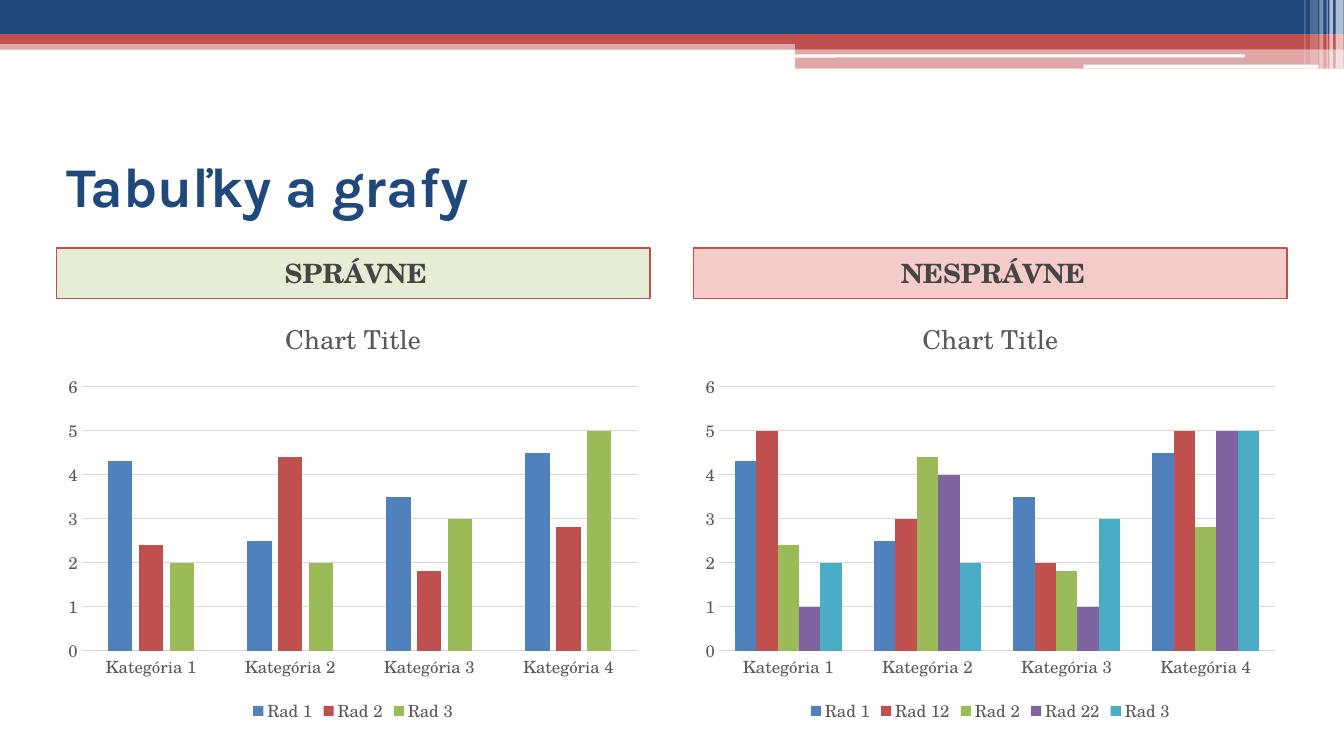
from lxml import etree
from pptx import Presentation
from pptx.chart.data import CategoryChartData
from pptx.dml.color import RGBColor
from pptx.enum.chart import XL_CHART_TYPE, XL_LEGEND_POSITION, XL_TICK_MARK
from pptx.enum.shapes import MSO_SHAPE
from pptx.enum.text import MSO_ANCHOR, PP_ALIGN
from pptx.oxml.ns import qn
from pptx.util import Cm, Pt

RECTANGLE = MSO_SHAPE.RECTANGLE
ROUNDED = MSO_SHAPE.ROUNDED_RECTANGLE
CLUSTERED = XL_CHART_TYPE.COLUMN_CLUSTERED
LEGEND_BOTTOM = XL_LEGEND_POSITION.BOTTOM
NO_TICK = XL_TICK_MARK.NONE
MIDDLE = MSO_ANCHOR.MIDDLE
CENTER = PP_ALIGN.CENTER
LEFT = PP_ALIGN.LEFT

COLORS = {
    "navy": "1F497D", "red": "C0504D", "white": "FFFFFF", "green": "9BBB59",
    "alert": "DD3530", "dark": "454545", "gray": "595959", "grid": "D9D9D9",
    "blue": "4F81BD", "purple": "8064A2", "teal": "4BACC6",
}
HEADING_FONT = "Karla"
BODY_FONT = "TeX Gyre Schola"
WIDTH, HEIGHT = 33.87, 19.05
PANEL_WIDTH = 14.96
SPLIT = 20.04

BANDS = [
    (0, 1.02, WIDTH, 0.23, "red", 50),
    (0, 0, WIDTH, 0.86, "navy", 100),
    (0, 0.86, WIDTH, 0.25, "red", 100),
    (SPLIT, 0.99, WIDTH - SPLIT, 0.25, "red", 100),
    (SPLIT, 1.22, WIDTH - SPLIT, 0.51, "red", 50),
]
WHITE_BARS = [(20.02, 1.37, 11.35, 0.08), (27.31, 1.63, 5.92, 0.1)]
STRIPES = [
    (33.66, 0.2, 1.73, 65), (33.5, 0.1, 1.73, 65), (33.43, 0.03, 1.73, 60),
    (33.25, 0.1, 1.73, 40), (33.02, 0.2, 1.63, 20), (32.87, 0.03, 1.63, 30),
]
CATEGORIES = [f"Kategória {number}" for number in range(1, 5)]
FIRST = (4.3, 2.5, 3.5, 4.5)
SECOND = (2.4, 4.4, 1.8, 2.8)
THIRD = (2, 2, 3, 5)
PANELS = [
    {"left": 1.42, "label": "SPRÁVNE", "color": "green", "gap": 219,
     "overlap": -27, "axis_line": True,
     "series": [("Rad 1", FIRST, "blue"), ("Rad 2", SECOND, "red"),
                ("Rad 3", THIRD, "green")]},
    {"left": 17.48, "label": "NESPRÁVNE", "color": "alert", "gap": 150,
     "overlap": 0, "axis_line": False,
     "series": [("Rad 1", FIRST, "blue"), ("Rad 12", (5, 3, 2, 5), "red"),
                ("Rad 2", SECOND, "green"), ("Rad 22", (1, 4, 1, 5), "purple"),
                ("Rad 3", THIRD, "teal")]},
]


def color(name):
    return RGBColor.from_string(COLORS[name])


class SlideBuilder:
    """Draws styled elements on one slide."""

    def __init__(self, slide):
        self.slide = slide

    def style(self, font, size, color_name, bold=False, name=BODY_FONT):
        font.name, font.size, font.bold = name, Pt(size), bold
        font.color.rgb = color(color_name)

    def add_text(self, shape, text, align, **style):
        shape.text_frame.word_wrap = True
        shape.text_frame.vertical_anchor = MIDDLE
        paragraph = shape.text_frame.paragraphs[0]
        paragraph.alignment = align
        run = paragraph.add_run()
        run.text = text
        self.style(run.font, bold=True, **style)
        return paragraph

    def box(self, left, top, width, height, fill, opacity=100, kind=RECTANGLE):
        shape = self.slide.shapes.add_shape(
            kind, Cm(left), Cm(top), Cm(width), Cm(height))
        shape.shadow.inherit = False
        shape.fill.solid()
        shape.fill.fore_color.rgb = color(fill)
        shape.line.fill.background()
        if opacity < 100:
            solid = shape.element.spPr.find(qn("a:solidFill"))
            etree.SubElement(solid[0], qn("a:alpha"), val=str(opacity * 1000))
        return shape

    def title(self, text):
        shape = self.slide.shapes.add_textbox(
            Cm(1.42), Cm(3.18), Cm(31.04), Cm(2.97))
        self.add_text(shape, text, LEFT, size=40, color_name="navy", name=HEADING_FONT)

    def label(self, left, text, fill):
        shape = self.box(left, 6.25, PANEL_WIDTH, 1.27, fill, 25)
        shape.line.color.rgb = color("red")
        shape.line.width = Pt(1)
        paragraph = self.add_text(shape, text, CENTER, size=19, color_name="dark")
        paragraph.space_before = Pt(3)
        paragraph._p.get_or_add_pPr().set("marL", str(Cm(0.13)))

    def axis(self, axis, line_visible):
        axis.major_tick_mark = axis.minor_tick_mark = NO_TICK
        self.style(axis.tick_labels.font, 12, "gray")
        if line_visible:
            axis.format.line.color.rgb = color("grid")
            axis.format.line.width = Pt(0.75)
        else:
            axis.format.line.fill.background()

    def chart(self, left, series, gap, overlap, axis_line):
        data = CategoryChartData()
        data.categories = CATEGORIES
        for name, values, _ in series:
            data.add_series(name, values)
        chart = self.slide.shapes.add_chart(
            CLUSTERED, Cm(left), Cm(7.52), Cm(PANEL_WIDTH), Cm(10.8), data).chart
        self.style(chart.font, 10, "gray")

        chart.has_title = True
        run = chart.chart_title.text_frame.paragraphs[0].add_run()
        run.text = "Chart Title"
        self.style(run.font, 18.6, "gray")

        chart.has_legend = True
        chart.legend.position = LEGEND_BOTTOM
        chart.legend.include_in_layout = False
        self.style(chart.legend.font, 12, "gray")

        self.axis(chart.category_axis, axis_line)
        value_axis = chart.value_axis
        self.axis(value_axis, False)
        value_axis.minimum_scale, value_axis.maximum_scale = 0, 6
        value_axis.major_unit = 1
        grid_line = value_axis.major_gridlines.format.line
        grid_line.color.rgb = color("grid")
        grid_line.width = Pt(0.75)

        plot = chart.plots[0]
        plot.vary_by_categories = False
        plot.gap_width, plot.overlap = gap, overlap
        for column, (_, _, color_name) in zip(plot.series, series):
            column.format.fill.solid()
            column.format.fill.fore_color.rgb = color(color_name)


def main():
    presentation = Presentation()
    presentation.slide_width, presentation.slide_height = Cm(WIDTH), Cm(HEIGHT)
    builder = SlideBuilder(
        presentation.slides.add_slide(presentation.slide_layouts[6]))
    for band in BANDS:
        builder.box(*band)
    for bar in WHITE_BARS:
        builder.box(*bar, "white", kind=ROUNDED)
    for left, width, height, opacity in STRIPES:
        builder.box(left, 0, width, height, "white", opacity)
    builder.title("Tabuľky a grafy")
    for panel in PANELS:
        builder.label(panel["left"], panel["label"], panel["color"])
        builder.chart(panel["left"], panel["series"], panel["gap"],
                      panel["overlap"], panel["axis_line"])
    presentation.save("out.pptx")


if __name__ == "__main__":
    main()
